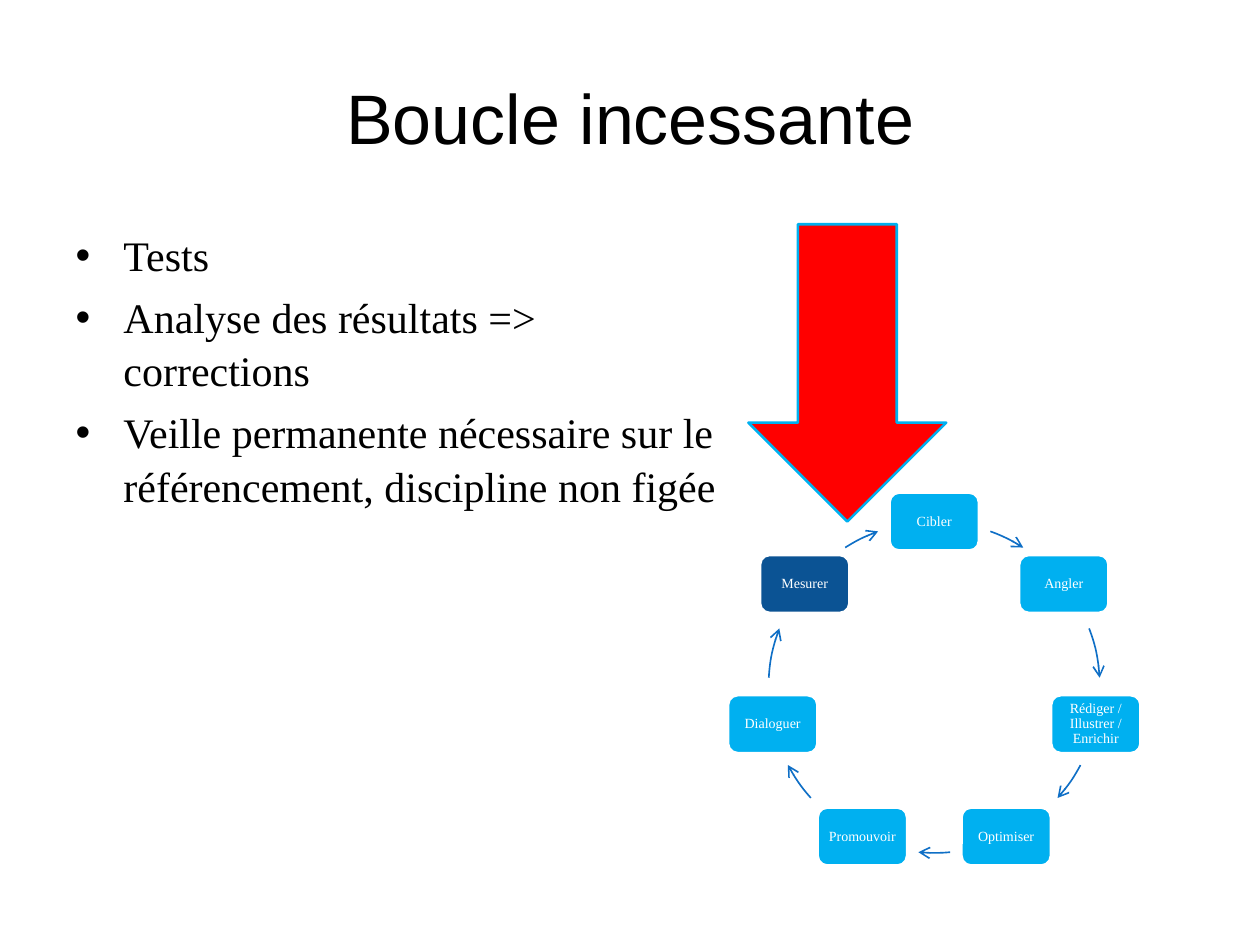
import math

import pptx
import pptx.util
import pptx.dml.color
import pptx.enum.shapes
import pptx.enum.text
import pptx.oxml.ns
from lxml import etree
from pptx.util import Inches, Pt

# Content
HEADING = "Boucle incessante"
POINTS = [
    "Tests",
    "Analyse des résultats => corrections",
    "Veille permanente nécessaire sur le référencement, discipline non figée",
]
STEPS = [
    ("Cibler", "00B0F0"),
    ("Angler", "00B0F0"),
    ("Rédiger / Illustrer / Enrichir", "00B0F0"),
    ("Optimiser", "00B0F0"),
    ("Promouvoir", "00B0F0"),
    ("Dialoguer", "00B0F0"),
    ("Mesurer", "0B5394"),
]
# Arc ends in degrees clockwise from the top; the left half mirrors the right
RIGHT_ARCS = [(19.8, 32.5), (69.2, 86.7), (118, 131.9)]
BOTTOM_ARC = (174.5, 185.5)
LEFT_ARCS = [(360 - end, 360 - start) for start, end in reversed(RIGHT_ARCS)]

# Layout, in inches
CENTER_X, CENTER_Y, RADIUS = 7.415, 5.455, 1.315
STEP_W, STEP_H = 0.71, 0.46

SHAPE = pptx.enum.shapes.MSO_SHAPE
ALIGN = pptx.enum.text.PP_ALIGN
ANCHOR = pptx.enum.text.MSO_ANCHOR


def color(hex_value):
    return pptx.dml.color.RGBColor.from_string(hex_value)


def place(shape, left, top, width, height):
    box = {"left": left, "top": top, "width": width, "height": height}
    for name, value in box.items():
        setattr(shape, name, Inches(value))


def format_text(paragraph, font_name, size, hex_value, **paragraph_format):
    for name, value in paragraph_format.items():
        setattr(paragraph, name, value)
    for name, value in {"name": font_name, "size": Pt(size)}.items():
        setattr(paragraph.font, name, value)
    paragraph.font.color.rgb = color(hex_value)


def add_shape(slide, kind, box, fill, line, line_width):
    shape = slide.shapes.add_shape(kind, *map(Inches, box))
    shape.shadow.inherit = False
    if fill:
        shape.fill.solid()
        shape.fill.fore_color.rgb = color(fill)
    else:
        shape.fill.background()
    shape.line.color.rgb = color(line)
    shape.line.width = Pt(line_width)
    return shape


def add_bullet(paragraph):
    properties = paragraph._p.get_or_add_pPr()
    properties.set("marL", str(Inches(0.38)))
    properties.set("indent", str(Inches(-0.38)))
    qn = pptx.oxml.ns.qn
    etree.SubElement(properties, qn("a:buFont")).set("typeface", "Arial")
    etree.SubElement(properties, qn("a:buChar")).set("char", "•")


def add_step(slide, index, label, fill):
    angle = 2 * math.pi * index / len(STEPS)
    left = CENTER_X + RADIUS * math.sin(angle) - STEP_W / 2
    top = CENTER_Y - RADIUS * math.cos(angle) - STEP_H / 2
    step = add_shape(slide, SHAPE.ROUNDED_RECTANGLE,
                     (left, top, STEP_W, STEP_H), fill, "FFFFFF", 1.5)
    frame = step.text_frame
    frame.word_wrap = True
    frame.vertical_anchor = ANCHOR.MIDDLE
    for side in ("left", "top", "right", "bottom"):
        setattr(frame, f"margin_{side}", Inches(0.03))
    frame.text = label
    format_text(frame.paragraphs[0], "Times New Roman", 8, "FFFFFF",
                alignment=ALIGN.CENTER, line_spacing=0.9)


def add_arc(slide, start, end):
    box = (CENTER_X - RADIUS, CENTER_Y - RADIUS, 2 * RADIUS, 2 * RADIUS)
    arc = add_shape(slide, SHAPE.ARC, box, None, "0F6FC6", 0.94)
    for index, angle in enumerate((start, end)):
        # Preset angles run from the right, in 60000ths of a degree
        arc.adjustments[index] = (angle - 90) % 360 * 0.6
    tail = etree.SubElement(arc.line._get_or_add_ln(),
                            pptx.oxml.ns.qn("a:tailEnd"))
    tail.set("type", "arrow")


def main():
    deck = pptx.Presentation()
    deck.slide_width, deck.slide_height = Inches(10), Inches(7.5)
    slide = deck.slides.add_slide(deck.slide_layouts[1])

    # Title
    title = slide.shapes.title
    place(title, 0.5, 0.3, 9, 1.25)
    title.text_frame.text = HEADING
    title.text_frame.vertical_anchor = ANCHOR.MIDDLE
    format_text(title.text_frame.paragraphs[0], "Arial", 40, "000000",
                alignment=ALIGN.CENTER)

    # Bullet list
    body = slide.placeholders[1]
    place(body, 0.5, 1.75, 5.29, 4.95)
    body.text_frame.text = "\n".join(POINTS)
    for index, paragraph in enumerate(body.text_frame.paragraphs):
        add_bullet(paragraph)
        format_text(paragraph, "Times New Roman", 24, "000000",
                    line_spacing=1.06, space_before=Pt(4.8 if index else 0))

    # Cycle of steps
    arcs = RIGHT_ARCS + [BOTTOM_ARC] + LEFT_ARCS
    for index, ((label, fill), arc) in enumerate(zip(STEPS, arcs)):
        add_step(slide, index, label, fill)
        add_arc(slide, *arc)

    # Arrow pointing at the current step
    add_shape(slide, SHAPE.DOWN_ARROW, (5.94, 1.78, 1.57, 2.36),
              "FF0000", "00B0F0", 1.5)

    deck.save("out.pptx")


if __name__ == "__main__":
    main()
